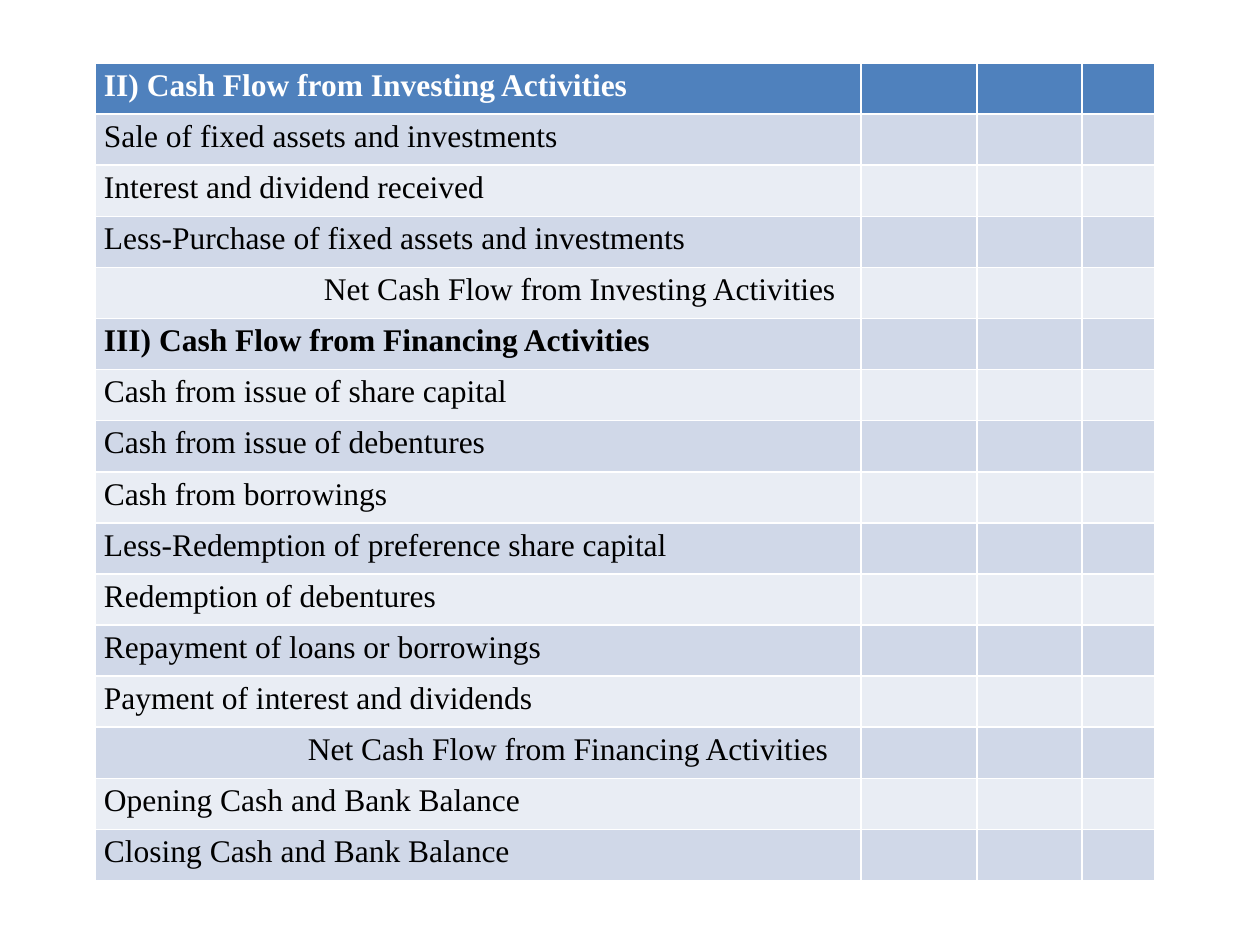
from pptx import Presentation
from pptx.dml.color import RGBColor
from pptx.util import Emu, Pt

EMU_PER_PX = 914400 // 126
HEADER_BLUE = RGBColor(0x4F, 0x81, 0xBD)
BAND_DARK = RGBColor(0xD0, 0xD8, 0xE8)
BAND_LIGHT = RGBColor(0xE9, 0xED, 0xF4)
WHITE = RGBColor(0xFF, 0xFF, 0xFF)
BLACK = RGBColor(0x00, 0x00, 0x00)

COLUMN_WIDTHS = [766, 116, 105, 73]
CELL_FORMAT = {"margin_left": 9, "margin_right": 9, "margin_top": 0, "margin_bottom": 0}

# Each entry: wording, bold, indent in px
ENTRIES = [
    ("II) Cash Flow from Investing Activities", True, 0),
    ("Sale of fixed assets and investments", False, 0),
    ("Interest and dividend received", False, 0),
    ("Less-Purchase of fixed assets and investments", False, 0),
    ("Net Cash Flow from Investing Activities", False, 220),
    ("III) Cash Flow from Financing Activities", True, 0),
    ("Cash from issue of share capital", False, 0),
    ("Cash from issue of debentures", False, 0),
    ("Cash from borrowings", False, 0),
    ("Less-Redemption of preference share capital", False, 0),
    ("Redemption of debentures", False, 0),
    ("Repayment of loans or borrowings", False, 0),
    ("Payment of interest and dividends", False, 0),
    ("Net Cash Flow from Financing Activities", False, 204),
    ("Opening Cash and Bank Balance", False, 0),
    ("Closing Cash and Bank Balance", False, 0),
]


def px(length):
    return Emu(length * EMU_PER_PX)


def write_entry(cell, wording, bold, indent, color):
    paragraph = cell.text_frame.paragraphs[0]
    paragraph.line_spacing = 1.15
    if indent:
        properties = paragraph._p.get_or_add_pPr()
        properties.set("marL", str(px(indent)))
        properties.set("indent", "0")
    run = paragraph.add_run()
    run.text = wording
    run.font.color.rgb = color
    font_format = {"name": "Times New Roman", "size": Pt(18), "bold": bold}
    for attribute, value in font_format.items():
        setattr(run.font, attribute, value)


def add_cash_flow_table(slide, left, top, height):
    frame = slide.shapes.add_table(
        len(ENTRIES), len(COLUMN_WIDTHS),
        px(left), px(top), px(sum(COLUMN_WIDTHS)), px(height))
    statement = frame.table
    for column, width in zip(statement.columns, COLUMN_WIDTHS):
        column.width = px(width)

    for index, (row, entry) in enumerate(zip(statement.rows, ENTRIES)):
        band = BAND_DARK if index % 2 else BAND_LIGHT
        for cell in row.cells:
            cell.fill.solid()
            cell.fill.fore_color.rgb = band if index else HEADER_BLUE
            for attribute, margin in CELL_FORMAT.items():
                setattr(cell, attribute, px(margin))
        write_entry(row.cells[0], *entry, color=BLACK if index else WHITE)


def main():
    presentation = Presentation()
    presentation.slide_width = px(1260)
    presentation.slide_height = px(945)
    slide = presentation.slides.add_slide(presentation.slide_layouts[6])
    add_cash_flow_table(slide, left=95, top=63, height=818)
    presentation.save("out.pptx")


if __name__ == "__main__":
    main()
